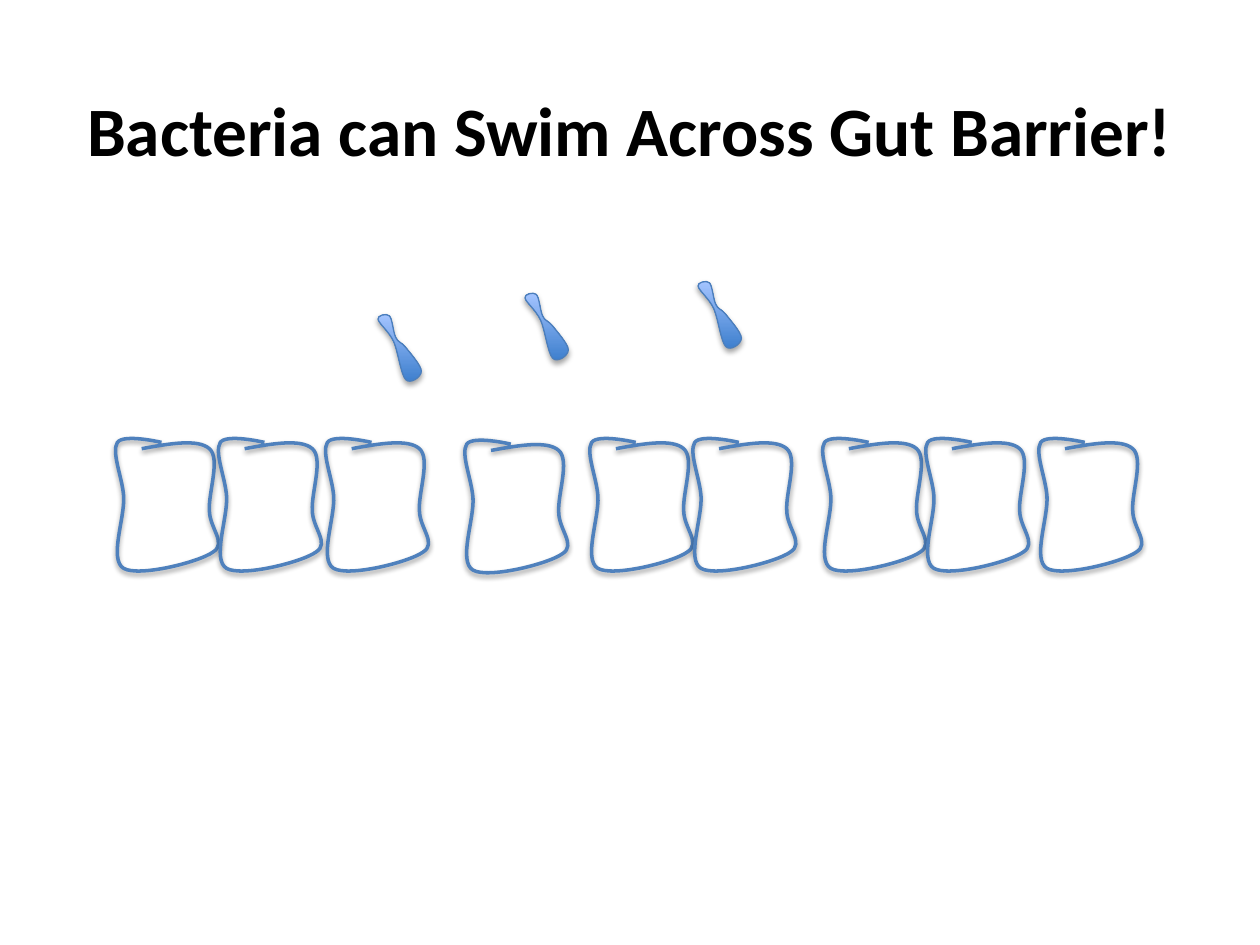
from dataclasses import dataclass

from lxml import etree
from pptx import Presentation
from pptx.dml.color import RGBColor
from pptx.enum.text import MSO_ANCHOR, PP_ALIGN
from pptx.oxml.ns import qn
from pptx.util import Pt

CENTER, MIDDLE = PP_ALIGN.CENTER, MSO_ANCHOR.MIDDLE


@dataclass(frozen=True)
class Theme:
    font: str = "Calibri"
    title_size: float = 39.6
    text: str = "000000"
    cell_line: str = "4F81BD"
    bacterium_line: str = "4B7EBC"
    bacterium_fill: tuple = ("3F80CE", "A4C4FF")
    shadow: str = "000000"


THEME = Theme()

# Outlines: a start point, then (control, control, end) for each curve
CELL = [(14.6, 5.8),
        (30.2, 2.9), (46.8, 0), (53.3, 5.8),
        (59.8, 11.5), (52.6, 31), (53.3, 41),
        (53.3, 51.1), (63.4, 59.8), (55.4, 64.8),
        (47.5, 70.6), (13, 79.2), (4.3, 74.2),
        (-4.3, 69.1), (5, 45.4), (4.3, 33.1),
        (3.6, 22.3), (-2.9, 7.9), (0.7, 2.2),
        (4.3, -2.9), (25.9, 2.2), (25.9, 2.2)]
BACTERIUM = [(0, 2.9),
             (0.4, 5.4), (6.3, 9.9), (9, 15.8),
             (11.5, 21.6), (13.1, 34.6), (15.8, 37.4),
             (18.4, 40.3), (24.8, 36), (24.8, 32.6),
             (24.8, 29.5), (18.4, 22.3), (15.8, 19),
             (13.3, 15.8), (11.5, 16.4), (10.1, 13.3),
             (8.6, 10.1), (8.3, 2.9), (6.5, 1),
             (4.7, -0.7), (-0.5, 0.9), (0, 2.9)]
CELL_SIZE = (59, 75.6)
BACTERIUM_SIZE = (25.2, 38.2)

CELL_TOP = 250.6
CELL_LEFTS = [66.4, 125.2, 186.4, 266, 337.4, 396.3, 470.5, 529.4, 594]
LOWERED_CELL = 3  # this cell sits one point lower
BACTERIA = [(398.9, 160.6), (216, 179.5), (300, 167.3)]


def rgb(value):
    return RGBColor.from_string(value)


def add_shadow(sp, alpha, distance):
    sp.shadow.inherit = False
    effects = sp._element.spPr.find(qn("a:effectLst"))
    outer = etree.SubElement(effects, qn("a:outerShdw"), blurRad=str(Pt(3.1)),
                             dist=str(Pt(distance)), dir="5400000", rotWithShape="0")
    color = etree.SubElement(outer, qn("a:srgbClr"), val=THEME.shadow)
    etree.SubElement(color, qn("a:alpha"), val=str(alpha * 1000))


def bend(sp, points):
    """Turn the straight segments of a freeform into cubic curves."""
    path = next(sp._element.iter(qn("a:path")))
    path.set("w", str(sp.width))
    path.set("h", str(sp.height))
    start = path.find(qn("a:moveTo")).find(qn("a:pt"))
    start.set("x", str(points[0][0]))
    start.set("y", str(points[0][1]))
    for i, segment in enumerate(path.findall(qn("a:lnTo"))):
        curve = etree.Element(qn("a:cubicBezTo"))
        for x, y in points[3 * i + 1:3 * i + 4]:
            etree.SubElement(curve, qn("a:pt"), x=str(x), y=str(y))
        path.replace(segment, curve)


def add_outline(s, outline, left, top, size, closed, color, width):
    points = [(int(Pt(x)), int(Pt(y))) for x, y in outline]
    builder = s.shapes.build_freeform(*points[0])
    builder.add_line_segments(points[3::3], close=closed)
    sp = builder.convert_to_shape()
    sp.left, sp.top = Pt(left), Pt(top)
    sp.width, sp.height = Pt(size[0]), Pt(size[1])
    bend(sp, points)
    sp.line.color.rgb = rgb(color)
    sp.line.width = Pt(width)
    return sp


def add_cell(s, left, top):
    sp = add_outline(s, CELL, left, top, CELL_SIZE, False, THEME.cell_line, 2)
    sp.fill.background()
    add_shadow(sp, 38, 1.6)


def add_bacterium(s, left, top):
    sp = add_outline(s, BACTERIUM, left, top, BACTERIUM_SIZE, True,
                     THEME.bacterium_line, 0.75)
    sp.fill.gradient()
    sp.fill.gradient_angle = 90
    for stop, color in zip(sp.fill.gradient_stops, THEME.bacterium_fill):
        stop.color.rgb = rgb(color)
    add_shadow(sp, 35, 1.8)


def add_title(s, text):
    tf = s.shapes.add_textbox(Pt(36), Pt(28.8), Pt(648), Pt(90)).text_frame
    tf.word_wrap = True
    tf.vertical_anchor = MIDDLE
    tf.text = text
    p = tf.paragraphs[0]
    p.alignment = CENTER
    font = p.runs[0].font
    font.name, font.size, font.bold = THEME.font, Pt(THEME.title_size), True
    font.color.rgb = rgb(THEME.text)


def main():
    prs = Presentation()
    prs.slide_width, prs.slide_height = Pt(720), Pt(540)
    s = prs.slides.add_slide(prs.slide_layouts[6])

    add_title(s, "Bacteria can Swim Across Gut Barrier!")

    # Gut barrier
    for i, left in enumerate(CELL_LEFTS):
        add_cell(s, left, CELL_TOP + (i == LOWERED_CELL))

    # Bacteria above the barrier
    for left, top in BACTERIA:
        add_bacterium(s, left, top)

    prs.save("out.pptx")


if __name__ == "__main__":
    main()
